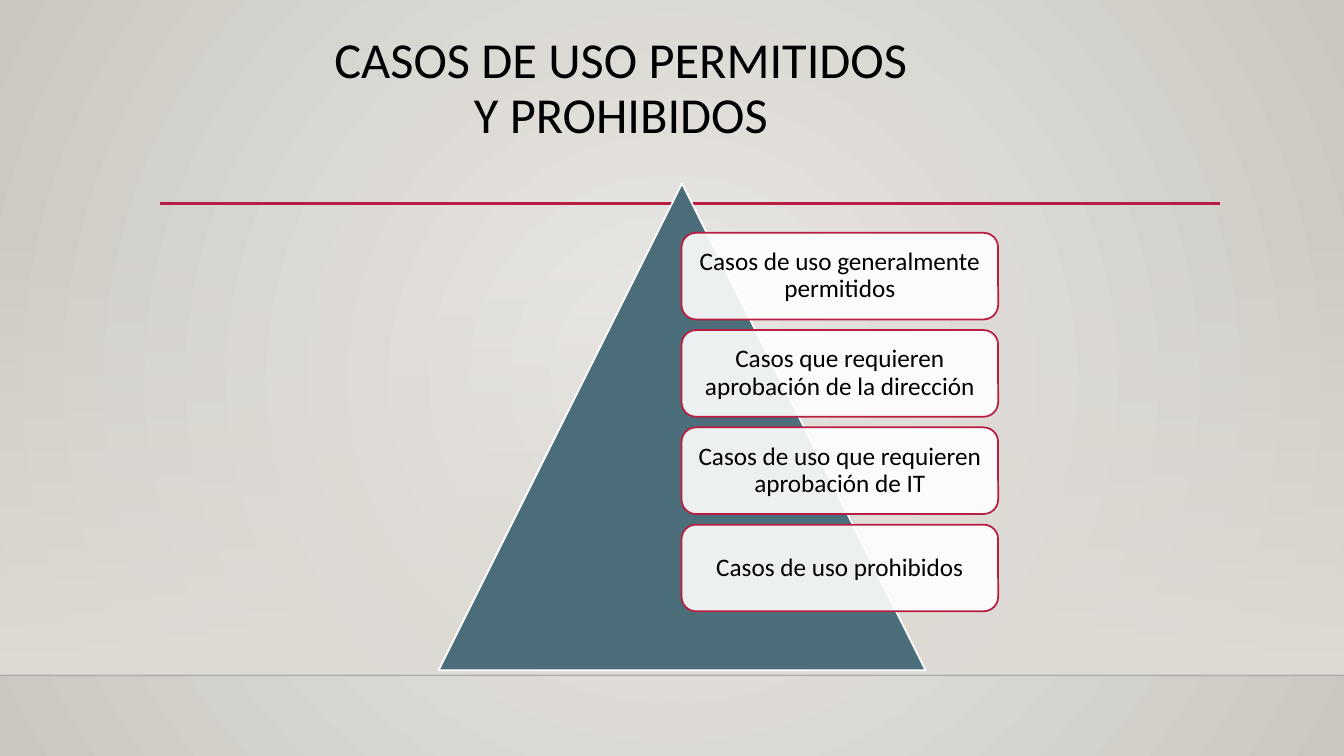
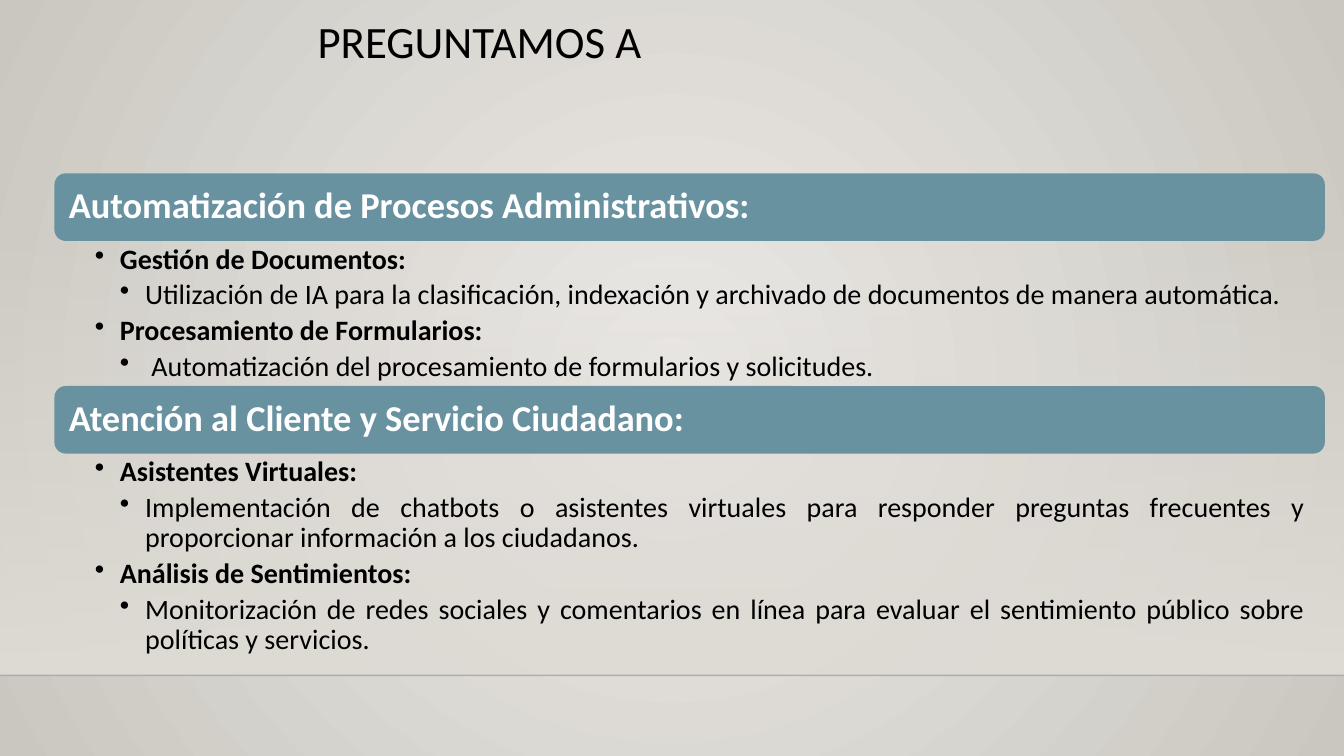
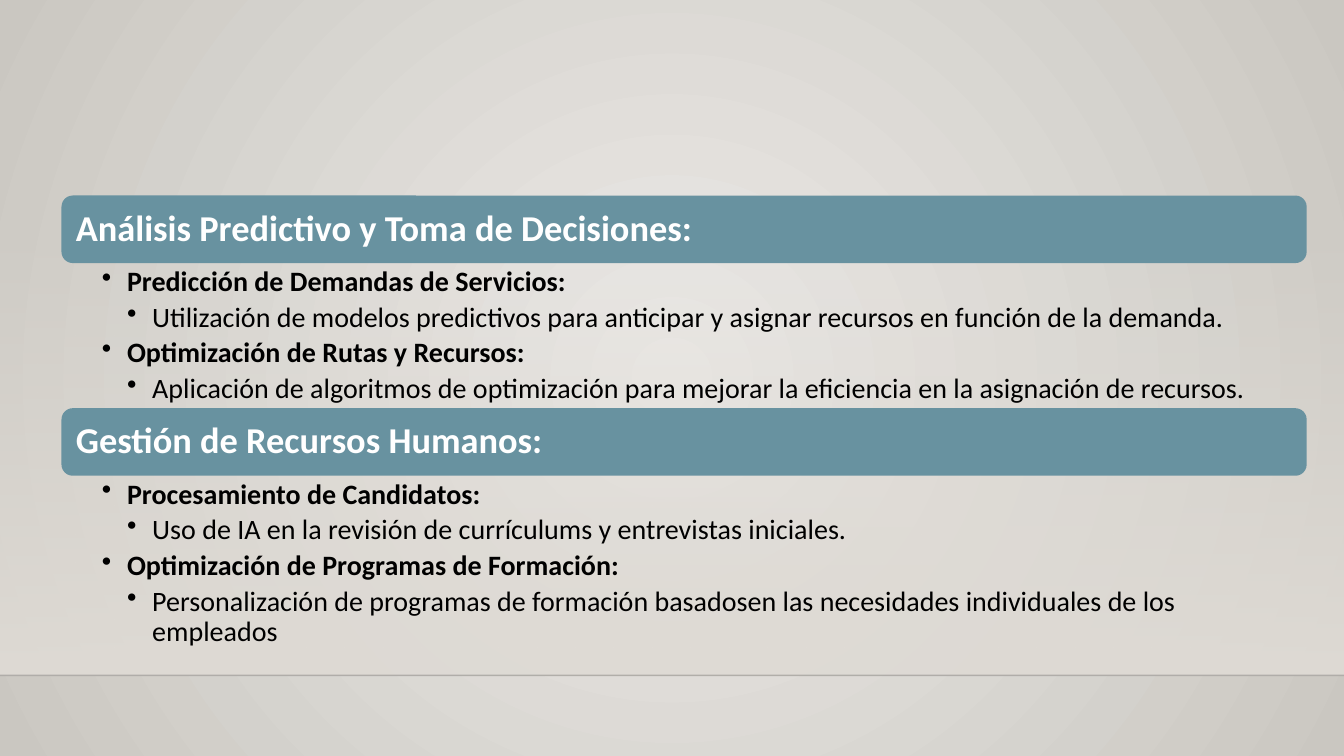
from lxml.etree import SubElement
from pptx import Presentation
from pptx.dml.color import RGBColor
from pptx.enum.shapes import MSO_CONNECTOR, MSO_SHAPE
from pptx.enum.text import MSO_ANCHOR, MSO_AUTO_SIZE, PP_ALIGN
from pptx.oxml.ns import qn
from pptx.util import Inches, Pt

FONT = "Calibri"
HEX = {
    "back_center": "ECEAE7", "back_edge": "CAC7C1", "wall": "DFDBD5",
    "floor": "000001", "accent": "B71E42", "pyramid": "4C6E7A",
    "header": "6892A0", "white": "FFFFFF", "text": "000000",
}
COLORS = {name: RGBColor.from_string(value) for name, value in HEX.items()}


def set_alpha(shape, percent):
    """Make the first explicit colour of the shape partly transparent."""
    color = next(shape.element.iter(qn("a:srgbClr")))
    SubElement(color, qn("a:alpha"), val=str(percent * 1000))


def format_text(paragraph, size, color="text", bold=False, align=PP_ALIGN.LEFT):
    paragraph.alignment = align
    paragraph.line_spacing = 0.9
    for span in paragraph.runs:
        span.font.name = FONT
        span.font.size = Pt(size)
        span.font.bold = bold
        span.font.color.rgb = COLORS[color]


deck = Presentation()
deck.slide_width, deck.slide_height = Inches(13.33), Inches(7.5)
master = deck.slide_master
title_only, blank = deck.slide_layouts[5], deck.slide_layouts[6]
pyramid_page, questions_page, analysis_page = [
    deck.slides.add_slide(layout) for layout in (title_only, title_only, blank)]

# Radial background on the master
fill = master.background.fill
fill.gradient()
for stop, name in zip(fill.gradient_stops, ("back_center", "back_edge")):
    stop.color.rgb = COLORS[name]
gradient = next(master.element.iter(qn("a:gradFill")))
gradient.remove(gradient.find(qn("a:lin")))
radial = SubElement(gradient, qn("a:path"), path="circle")
SubElement(radial, qn("a:fillToRect"), l="50000", t="50000", r="50000", b="50000")

# Wall and floor line, moved to the master; accent line stays on the first page
wall = pyramid_page.shapes.add_shape(
    MSO_SHAPE.RECTANGLE, 0, Inches(2.21), deck.slide_width, Inches(4.49))
wall.shadow.inherit = False
wall.line.fill.background()
wall.fill.gradient()
wall.fill.gradient_angle = 270
for stop in wall.fill.gradient_stops:
    stop.color.rgb = COLORS["wall"]
set_alpha(wall, 0)

lines = []
for left, right, top, name, width in (
        (0, 13.33, 6.7, "floor", 1), (1.59, 12.1, 2.02, "accent", 2.5)):
    line = pyramid_page.shapes.add_connector(
        MSO_CONNECTOR.STRAIGHT, Inches(left), Inches(top), Inches(right), Inches(top))
    line.line.color.rgb = COLORS[name]
    line.line.width = Pt(width)
    SubElement(line.element.spPr, qn("a:effectLst"))
    lines.append(line)
floor_line = lines[0]
set_alpha(floor_line, 20)

for position, shape in enumerate((wall, floor_line)):
    next(shape.element.iter(qn("p:cNvPr"))).set("id", str(20 + position))
    master.shapes.element.insert(2 + position, shape.element)

# Titles
for page, text, left, top, width, size, align in (
        (pyramid_page, "CASOS DE USO PERMITIDOS \nY PROHIBIDOS ",
         1.93, 0.3, 8.57, 36, PP_ALIGN.CENTER),
        (questions_page, "PREGUNTAMOS A", 3.05, 0.15, 7.44, 32, PP_ALIGN.LEFT)):
    title = page.shapes.title
    title.left, title.top = Inches(left), Inches(top)
    title.width, title.height = Inches(width), Inches(1.25)
    frame = title.text_frame
    frame.auto_size = MSO_AUTO_SIZE.NONE
    frame.vertical_anchor = MSO_ANCHOR.TOP
    frame.paragraphs[0].text = text
    format_text(frame.paragraphs[0], size, align=align)

# Pyramid with its use cases
pyramid = pyramid_page.shapes.add_shape(
    MSO_SHAPE.ISOSCELES_TRIANGLE, Inches(4.35), Inches(1.82), Inches(4.83), Inches(4.83))
pyramid.shadow.inherit = False
pyramid.fill.solid()
pyramid.fill.fore_color.rgb = COLORS["pyramid"]
pyramid.line.color.rgb = COLORS["white"]
pyramid.line.width = Pt(1.25)

use_cases = (
    "Casos de uso generalmente permitidos",
    "Casos que requieren aprobación de la dirección",
    "Casos de uso que requieren aprobación de IT",
    "Casos de uso prohibidos",
)
for row, use_case in enumerate(use_cases):
    box = pyramid_page.shapes.add_shape(
        MSO_SHAPE.ROUNDED_RECTANGLE,
        Inches(6.76), Inches(2.31 + row * 0.965), Inches(3.14), Inches(0.86))
    box.shadow.inherit = False
    box.fill.solid()
    box.fill.fore_color.rgb = COLORS["white"]
    set_alpha(box, 90)
    box.line.color.rgb = COLORS["accent"]
    box.line.width = Pt(1.25)
    frame = box.text_frame
    frame.margin_left = frame.margin_right = Inches(0.11)
    frame.vertical_anchor = MSO_ANCHOR.MIDDLE
    frame.text = use_case
    format_text(frame.paragraphs[0], 18, align=PP_ALIGN.CENTER)

# Sections: header, body height, alignment, then topics with their detail
HEADER_HEIGHT = 0.67
question_sections = (
    ("Automatización de Procesos Administrativos:", 1.44, PP_ALIGN.JUSTIFY, (
        ("Gestión de Documentos:",
         "Utilización de IA para la clasificación, indexación y archivado de documentos de manera automática."),
        ("Procesamiento de Formularios:",
         " Automatización del procesamiento de formularios y solicitudes."))),
    ("Atención al Cliente y Servicio Ciudadano:", 2.06, PP_ALIGN.JUSTIFY, (
        ("Asistentes Virtuales:",
         "Implementación de chatbots o asistentes virtuales para responder preguntas frecuentes y "
         "proporcionar información a los ciudadanos."),
        ("Análisis de Sentimientos:",
         "Monitorización de redes sociales y comentarios en línea para evaluar el sentimiento público "
         "sobre políticas y servicios."))),
)
analysis_sections = (
    ("Análisis Predictivo y Toma de Decisiones:", 1.44, PP_ALIGN.JUSTIFY, (
        ("Predicción de Demandas de Servicios:",
         "Utilización de modelos predictivos para anticipar y asignar recursos en función de la demanda."),
        ("Optimización de Rutas y Recursos:",
         "Aplicación de algoritmos de optimización para mejorar la eficiencia en la asignación de recursos."))),
    ("Gestión de Recursos Humanos:", 1.74, PP_ALIGN.LEFT, (
        ("Procesamiento de Candidatos:",
         "Uso de IA en la revisión de currículums y entrevistas iniciales."),
        ("Optimización de Programas de Formación:",
         "Personalización de programas de formación basadosen las necesidades individuales de los empleados"))),
)

for page, left, top, width, sections in (
        (questions_page, 0.54, 1.72, 12.6, question_sections),
        (analysis_page, 0.61, 1.94, 12.35, analysis_sections)):
    for heading, body_height, align, topics in sections:
        header = page.shapes.add_shape(
            MSO_SHAPE.ROUNDED_RECTANGLE,
            Inches(left), Inches(top), Inches(width), Inches(HEADER_HEIGHT))
        header.shadow.inherit = False
        header.fill.solid()
        header.fill.fore_color.rgb = COLORS["header"]
        header.line.fill.background()
        frame = header.text_frame
        frame.margin_left = frame.margin_right = Inches(0.11)
        frame.vertical_anchor = MSO_ANCHOR.MIDDLE
        frame.text = heading
        format_text(frame.paragraphs[0], 26, "white", bold=True)
        top += HEADER_HEIGHT

        body = page.shapes.add_textbox(
            Inches(left), Inches(top), Inches(width), Inches(body_height))
        frame = body.text_frame
        frame.word_wrap = True
        frame.margin_left, frame.margin_right = Inches(0.4), Inches(0.2)
        frame.margin_top = frame.margin_bottom = Inches(0.04)
        frame.text = "\n".join(text for topic in topics for text in topic)
        for index, para in enumerate(frame.paragraphs):
            level = index % 2 + 1
            para.level = level
            properties = para._p.get_or_add_pPr()
            properties.set("marL", str(Inches(0.25 * level)))
            properties.set("indent", str(Inches(-0.25)))
            SubElement(properties, qn("a:buChar"), char="•")
            para.space_after = Pt(4)
            format_text(para, 20, bold=level == 1, align=align)
        top += body_height

deck.save("out.pptx")
